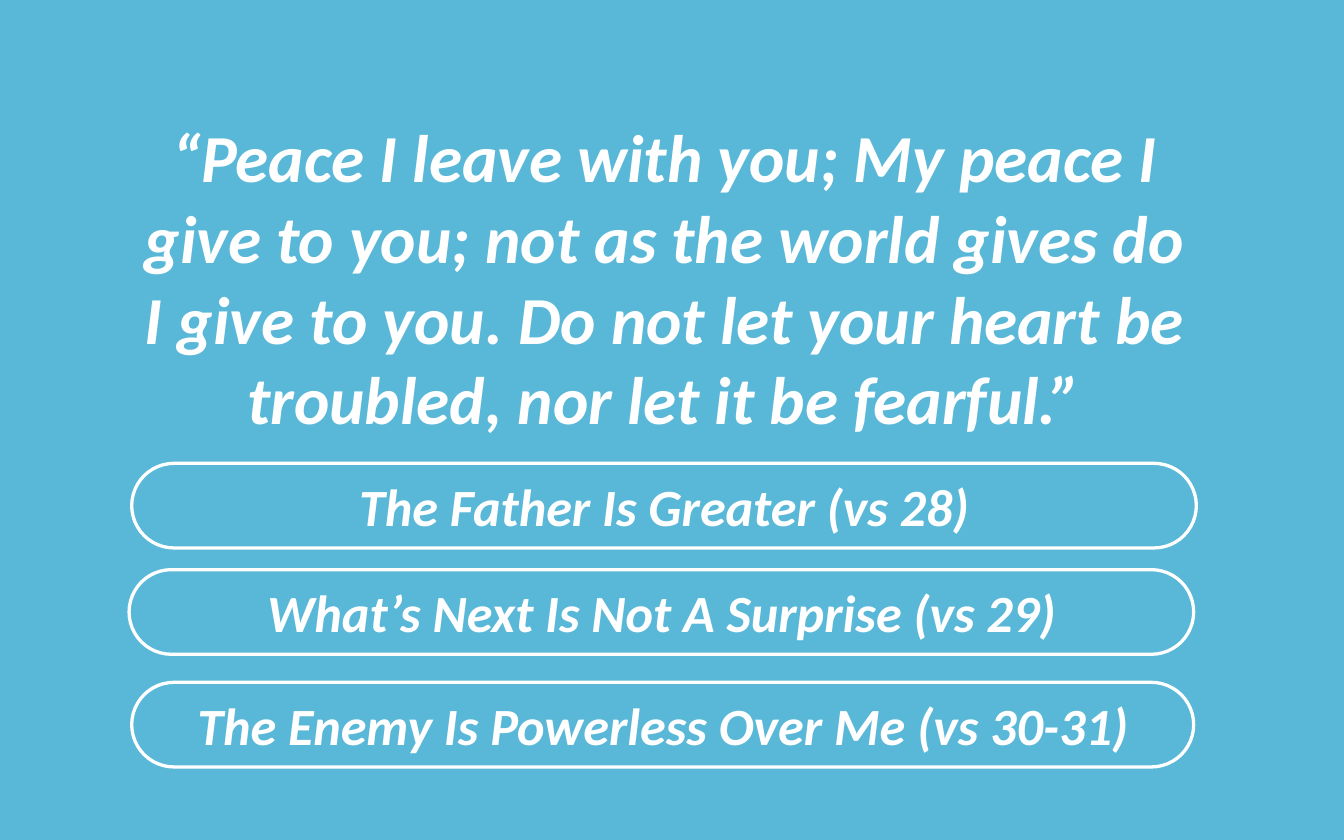
from lxml.etree import SubElement
from pptx import Presentation
from pptx.dml.color import RGBColor
from pptx.enum.shapes import MSO_SHAPE as SHAPE
from pptx.enum.text import MSO_ANCHOR as ANCHOR, MSO_AUTO_SIZE as AUTO, PP_ALIGN as ALIGN
from pptx.oxml.ns import qn
from pptx.util import Cm, Pt

# Content
VERSE = ("“Peace I leave with you; My peace I give to you; not as the world "
         "gives do I give to you. Do not let your heart be troubled, "
         "nor let it be fearful.”")
# text, left, top, width in cm
POINTS = [
    ("The Father Is Greater (vs 28)", 2.49, 8.76, 20.12),
    ("What’s Next Is Not A Surprise (vs 29)", 2.44, 10.77, 20.12),
    ("The Enemy Is Powerless Over Me (vs 30-31)", 2.49, 12.9, 20.07),
]
PILL_HEIGHT = 1.6

WHITE = RGBColor(0xFF, 0xFF, 0xFF)
BLUE = RGBColor(0x00, 0x92, 0xC2)
FONT = "Calibri"


def write(shape, text, size, anchor):
    tf = shape.text_frame
    tf.word_wrap = True
    tf.vertical_anchor = anchor
    p = tf.paragraphs[0]
    p.alignment = ALIGN.CENTER
    r = p.add_run()
    r.text = text
    r.font.name, r.font.size = FONT, Pt(size)
    r.font.bold = r.font.italic = True
    r.font.color.rgb = WHITE


prs = Presentation()
prs.slide_width, prs.slide_height = Cm(25.4), Cm(15.88)
s = prs.slides.add_slide(prs.slide_layouts[5])
s.background.fill.solid()
s.background.fill.fore_color.rgb = WHITE

# Translucent blue wash, sent behind the title
wash = s.shapes.add_shape(SHAPE.RECTANGLE, 0, 0, prs.slide_width, prs.slide_height)
wash.shadow.inherit = False
wash.fill.solid()
wash.fill.fore_color.rgb = BLUE
wash.line.fill.background()
color = wash.element.spPr.find(qn("a:solidFill")).find(qn("a:srgbClr"))
SubElement(color, qn("a:alpha"), val="65000")
s.shapes.title.element.addprevious(wash.element)

# Verse
title = s.shapes.title
title.left, title.top, title.width, title.height = Cm(2.26), Cm(2.06), Cm(20.6), Cm(7.95)
write(title, VERSE, 36, ANCHOR.TOP)
title.text_frame.auto_size = AUTO.SHAPE_TO_FIT_TEXT

# Outlined points
for text, left, top, width in POINTS:
    pill = s.shapes.add_shape(SHAPE.ROUNDED_RECTANGLE, Cm(left), Cm(top),
                              Cm(width), Cm(PILL_HEIGHT))
    pill.adjustments[0] = 0.5
    pill.shadow.inherit = False
    pill.fill.background()
    pill.line.color.rgb = WHITE
    pill.line.width = Pt(1.75)
    write(pill, text, 28, ANCHOR.MIDDLE)

prs.save("out.pptx")
